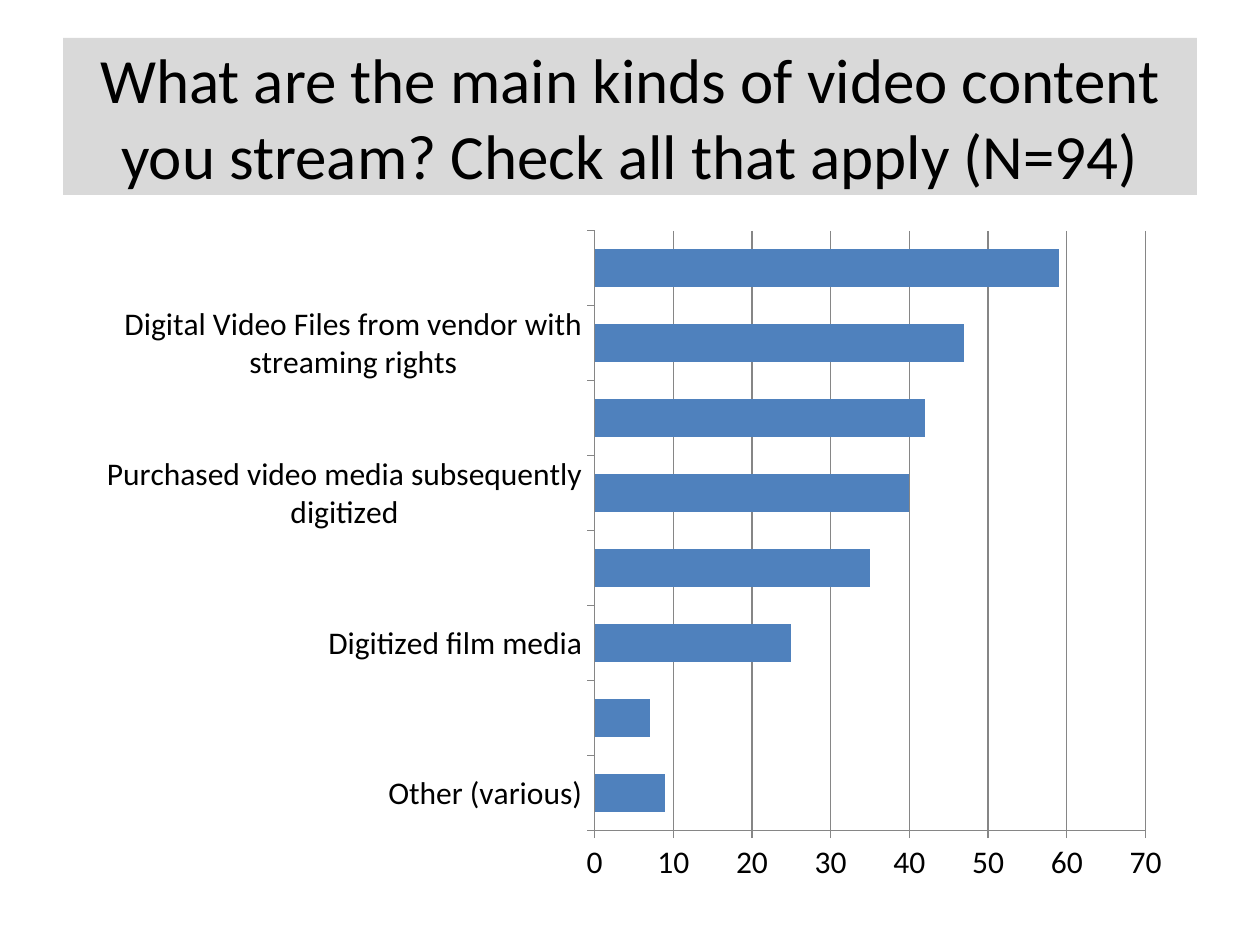
from pptx import Presentation
from pptx import util as u
from pptx.chart.data import CategoryChartData
from pptx.dml.color import RGBColor
from pptx.enum import chart as ch, text
from pptx.oxml import parse_xml
from pptx.oxml.ns import nsdecls

EMU_PER_PX = 914400 / 126

ANSWERS = [
    ("Other (various)", 9),
    ("", 7),
    ("Digitized film media", 25),
    ("", 35),
    ("Purchased video media subsequently digitized", 40),
    ("", 42),
    ("Digital Video Files from vendor with streaming rights", 47),
    ("", 59),
]


def px(n):
    return u.Emu(round(n * EMU_PER_PX))


def rgb(color):
    return RGBColor.from_string(color)


class Deck:
    font = "Calibri"
    ink = "000000"
    band = "D9D9D9"
    bar = "4F81BD"
    rule = "868686"

    def __init__(self, width, height):
        self.prs = Presentation()
        self.prs.slide_width, self.prs.slide_height = px(width), px(height)
        self.s = self.prs.slides.add_slide(self.prs.slide_layouts[5])

    def style(self, font, size):
        font.name = self.font
        font.size = u.Pt(size)
        font.color.rgb = rgb(self.ink)

    def line(self, fmt):
        fmt.line.color.rgb = rgb(self.rule)
        fmt.line.width = u.Pt(0.75)

    def title(self, words, x, y, w, h):
        sp = self.s.shapes.title
        sp.left, sp.top, sp.width, sp.height = map(px, (x, y, w, h))
        sp.fill.solid()
        sp.fill.fore_color.rgb = rgb(self.band)
        tf = sp.text_frame
        tf.word_wrap = True
        tf.auto_size = text.MSO_AUTO_SIZE.NONE
        tf.vertical_anchor = text.MSO_ANCHOR.MIDDLE
        p = tf.paragraphs[0]
        p.alignment = text.PP_ALIGN.CENTER
        r = p.add_run()
        r.text = words
        self.style(r.font, 36)
        self.s.shapes._spTree.append(sp._element)

    def bar_chart(self, answers, x, y, w, h, plot_area):
        labels, counts = zip(*answers)
        data = CategoryChartData()
        data.categories = labels
        data.add_series("Series 1", counts)
        chart = self.s.shapes.add_chart(
            ch.XL_CHART_TYPE.BAR_CLUSTERED, *map(px, (x, y, w, h)), data
        ).chart
        chart.has_legend = False
        chart.has_title = False
        self.style(chart.font, 18)
        plot = chart.plots[0]
        plot.gap_width = 100
        plot.vary_by_categories = False
        fill = plot.series[0].format.fill
        fill.solid()
        fill.fore_color.rgb = rgb(self.bar)
        for axis in (chart.category_axis, chart.value_axis):
            axis.major_tick_mark = ch.XL_TICK_MARK.OUTSIDE
            axis.minor_tick_mark = ch.XL_TICK_MARK.NONE
            self.line(axis.format)
        chart.category_axis.has_major_gridlines = False
        axis = chart.value_axis
        axis.minimum_scale, axis.maximum_scale, axis.major_unit = 0, 70, 10
        axis.has_major_gridlines = True
        self.line(axis.major_gridlines.format)
        self.place_plot(chart, plot_area)

    def place_plot(self, chart, plot_area):
        area = chart._chartSpace.chart.plotArea
        for old in area.findall("{*}layout"):
            area.remove(old)
        sizes = "".join(f'<c:{k} val="{v}"/>' for k, v in zip("xywh", plot_area))
        area.insert(0, parse_xml(
            f'<c:layout {nsdecls("c")}><c:manualLayout><c:layoutTarget val="inner"/>'
            '<c:xMode val="edge"/><c:yMode val="edge"/>'
            f"{sizes}</c:manualLayout></c:layout>"
        ))


def main():
    deck = Deck(1260, 945)
    deck.bar_chart(ANSWERS, 31, 158, 1155, 751, (0.488, 0.097, 0.477, 0.799))
    deck.title(
        "What are the main kinds of video content you stream? "
        "Check all that apply (N=94)",
        63, 38, 1134, 157,
    )
    deck.prs.save("out.pptx")


if __name__ == "__main__":
    main()
